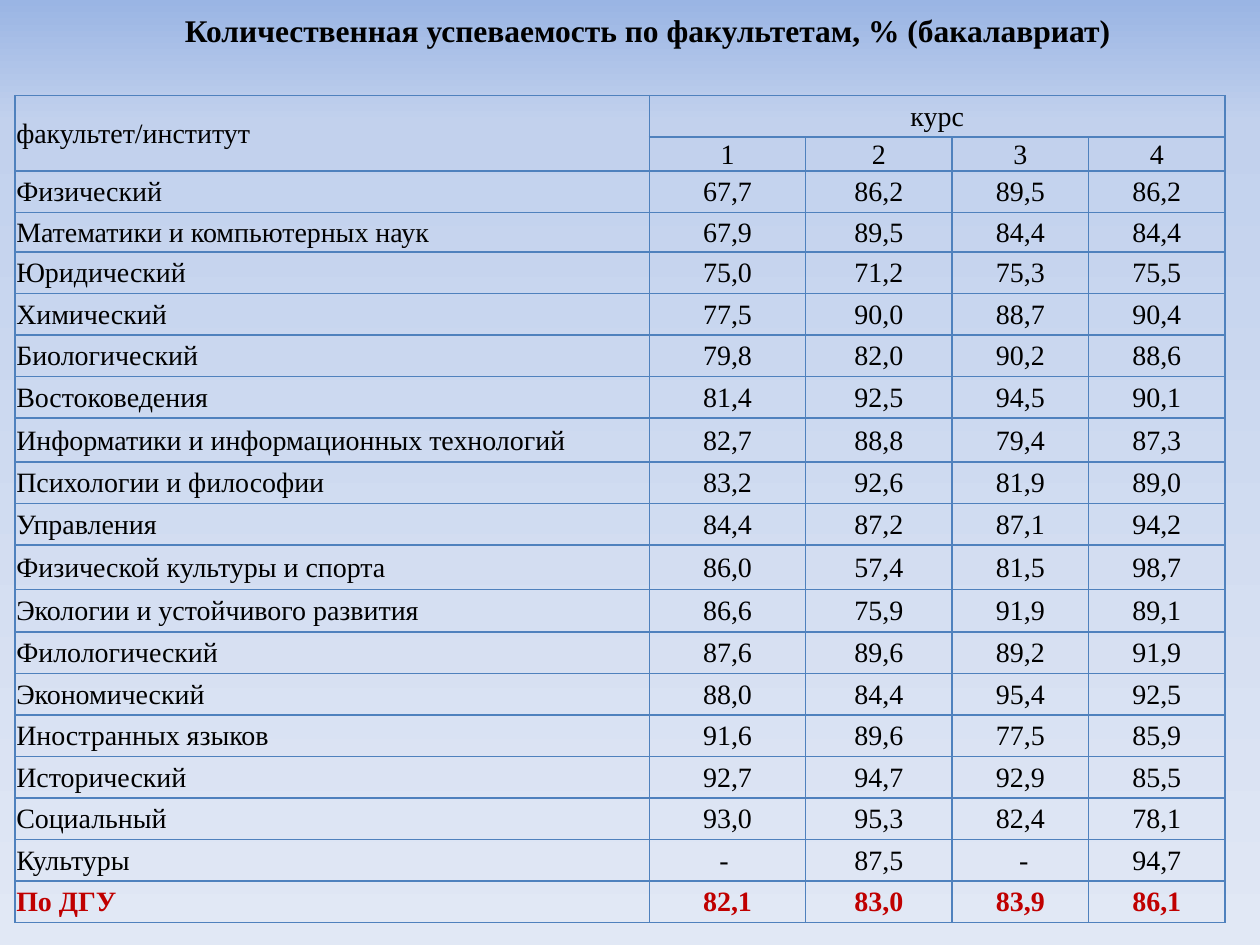
from copy import deepcopy

from lxml import etree
from pptx import Presentation
from pptx.dml.color import RGBColor
from pptx.enum.text import MSO_ANCHOR, PP_ALIGN
from pptx.oxml.ns import qn
from pptx.util import Pt

LEFT, CENTER = PP_ALIGN.LEFT, PP_ALIGN.CENTER
MIDDLE = MSO_ANCHOR.MIDDLE

COLORS = {
    "sky": "9AB5E4",
    "haze": "C2D1ED",
    "mist": "E1E8F5",
    "border": "4F81BD",
    "text": "000000",
    "total": "C00000",
}
BACKGROUND_STOPS = [("sky", 0), ("haze", 0.13), ("mist", 1)]
TITLE = "Количественная успеваемость по факультетам, % (бакалавриат)"
TITLE_FORMAT = {"name": "Times New Roman", "size": Pt(18), "bold": True}
BODY_FORMAT = {"name": "Times New Roman", "size": Pt(16), "bold": False}
TOTAL_FORMAT = {**BODY_FORMAT, "bold": True}
CELL_FORMAT = {
    "margin_left": Pt(0.72),
    "margin_right": Pt(0.72),
    "margin_top": Pt(0.72),
    "margin_bottom": Pt(0),
    "vertical_anchor": MIDDLE,
}
COLUMN_WIDTHS = [362.5, 89.3, 83.7, 78, 78]
ROW_HEIGHT = 23.7
SPECIAL_HEIGHTS = {1: 19.4, 3: 22.6, 8: 25.2, 11: 25.4, 12: 24.3}
ROWS = [
    ["факультет/институт", "курс", "", "", ""],
    ["", "1", "2", "3", "4"],
    ["Физический", "67,7", "86,2", "89,5", "86,2"],
    ["Математики и компьютерных наук", "67,9", "89,5", "84,4", "84,4"],
    ["Юридический", "75,0", "71,2", "75,3", "75,5"],
    ["Химический", "77,5", "90,0", "88,7", "90,4"],
    ["Биологический", "79,8", "82,0", "90,2", "88,6"],
    ["Востоковедения", "81,4", "92,5", "94,5", "90,1"],
    ["Информатики и информационных технологий", "82,7", "88,8", "79,4", "87,3"],
    ["Психологии и философии", "83,2", "92,6", "81,9", "89,0"],
    ["Управления", "84,4", "87,2", "87,1", "94,2"],
    ["Физической культуры и спорта", "86,0", "57,4", "81,5", "98,7"],
    ["Экологии и устойчивого развития", "86,6", "75,9", "91,9", "89,1"],
    ["Филологический", "87,6", "89,6", "89,2", "91,9"],
    ["Экономический", "88,0", "84,4", "95,4", "92,5"],
    ["Иностранных языков", "91,6", "89,6", "77,5", "85,9"],
    ["Исторический", "92,7", "94,7", "92,9", "85,5"],
    ["Социальный", "93,0", "95,3", "82,4", "78,1"],
    ["Культуры", "- ", "87,5", " -", "94,7"],
    ["По ДГУ", "82,1", "83,0", "83,9", "86,1"],
]


def apply_format(target, values):
    """Set each attribute of the target from a dict."""
    for name, value in values.items():
        setattr(target, name, value)


def paint_background(slide):
    """Fill the slide with a vertical three-stop gradient."""
    fill = slide.background.fill
    fill.gradient()
    fill.gradient_angle = 270
    stop_list = slide.element.find(".//" + qn("a:gsLst"))
    stop_list.append(deepcopy(stop_list[-1]))
    for stop, (color, position) in zip(fill.gradient_stops, BACKGROUND_STOPS):
        stop.color.rgb = RGBColor.from_string(COLORS[color])
        stop.position = position


def write_text(frame, text, align, font_format, color):
    """Write one formatted paragraph into a text frame."""
    para = frame.paragraphs[0]
    para.alignment = align
    span = para.add_run()
    span.text = text
    apply_format(span.font, font_format)
    span.font.color.rgb = RGBColor.from_string(COLORS[color])


def add_title(slide):
    """Add the centred slide title."""
    box = slide.shapes.add_textbox(Pt(20.2), Pt(2.9), Pt(700), Pt(29))
    box.text_frame.word_wrap = True
    write_text(box.text_frame, TITLE, CENTER, TITLE_FORMAT, "text")


def add_borders(cell):
    """Draw a thin line on all four sides of a cell."""
    properties = cell._tc.get_or_add_tcPr()
    for index, side in enumerate(("a:lnL", "a:lnR", "a:lnT", "a:lnB")):
        line = etree.Element(qn(side), w=str(Pt(1)))
        fill = etree.SubElement(line, qn("a:solidFill"))
        etree.SubElement(fill, qn("a:srgbClr"), val=COLORS["border"])
        properties.insert(index, line)


def add_results_table(slide):
    """Add the table of results by faculty and year."""
    heights = [SPECIAL_HEIGHTS.get(index, ROW_HEIGHT) for index in range(len(ROWS))]
    table = slide.shapes.add_table(
        len(ROWS), len(COLUMN_WIDTHS), Pt(8.6), Pt(54.7),
        Pt(sum(COLUMN_WIDTHS)), Pt(sum(heights)),
    ).table
    apply_format(table, {"first_row": False, "horz_banding": False})
    for column, width in zip(table.columns, COLUMN_WIDTHS):
        column.width = Pt(width)
    for row, height in zip(table.rows, heights):
        row.height = Pt(height)
    for row_index, values in enumerate(ROWS):
        is_total = row_index == len(ROWS) - 1
        font_format, color = (TOTAL_FORMAT, "total") if is_total else (BODY_FORMAT, "text")
        for column_index, text in enumerate(values):
            cell = table.cell(row_index, column_index)
            apply_format(cell, CELL_FORMAT)
            cell.fill.background()
            add_borders(cell)
            if text:
                align = CENTER if column_index else LEFT
                write_text(cell.text_frame, text, align, font_format, color)
    table.cell(0, 0).merge(table.cell(1, 0))
    table.cell(0, 1).merge(table.cell(0, 4))


def main():
    """Build and save the slide."""
    deck = Presentation()
    apply_format(deck, {"slide_width": Pt(720), "slide_height": Pt(540)})
    slide = deck.slides.add_slide(deck.slide_layouts[6])
    paint_background(slide)
    add_results_table(slide)
    add_title(slide)
    deck.save("out.pptx")


if __name__ == "__main__":
    main()
